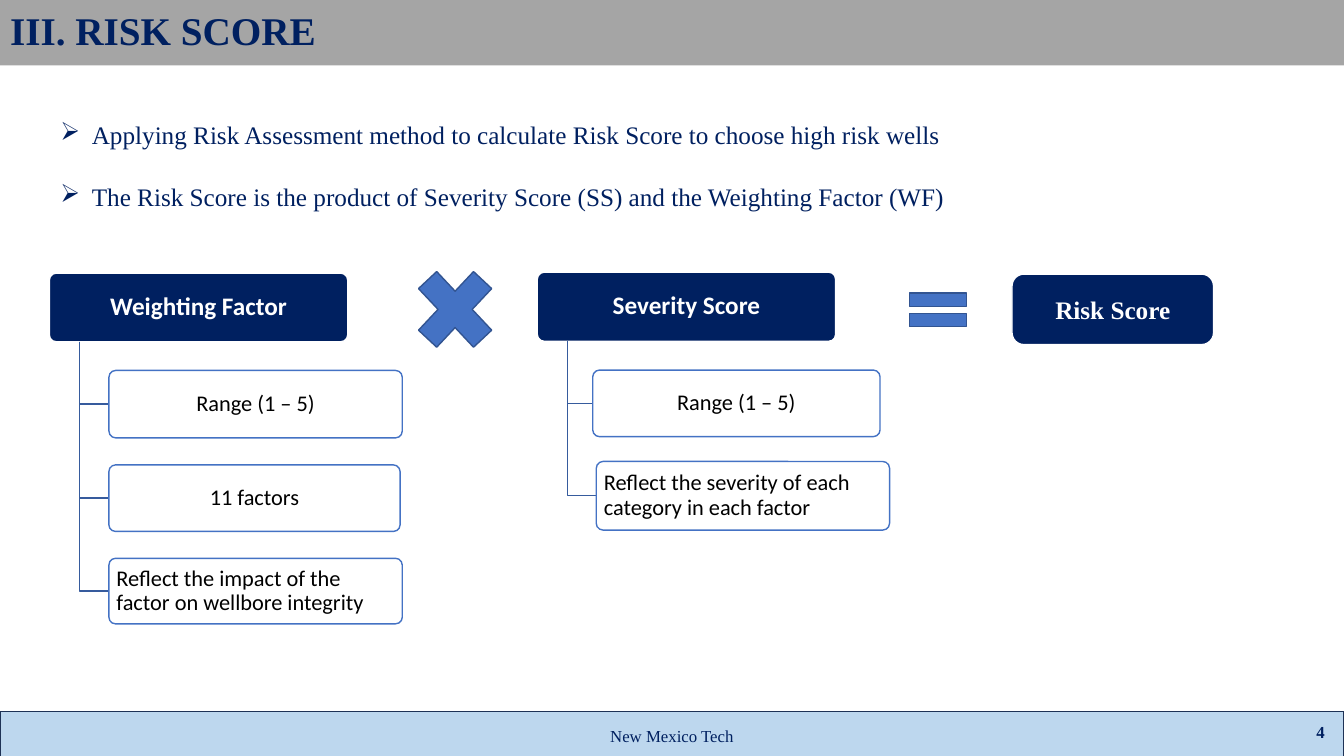
from lxml import etree
from pptx import Presentation
from pptx.dml.color import RGBColor
from pptx.enum.shapes import MSO_SHAPE
from pptx.enum.text import MSO_ANCHOR, PP_ALIGN
from pptx.oxml.ns import qn
from pptx.util import Pt

NAVY = RGBColor(0x00, 0x20, 0x60)
WHITE = RGBColor(0xFF, 0xFF, 0xFF)
BLACK = RGBColor(0x00, 0x00, 0x00)
GRAY = RGBColor(0xA5, 0xA5, 0xA5)
PALE_BLUE = RGBColor(0xBD, 0xD7, 0xEE)
FOOTER_EDGE = RGBColor(0x1E, 0x32, 0x56)
BLUE = RGBColor(0x44, 0x72, 0xC4)
SIGN_EDGE = RGBColor(0x32, 0x54, 0x91)
BRANCH = RGBColor(0x36, 0x5B, 0x9D)

RECTANGLE = MSO_SHAPE.RECTANGLE
ROUNDED = MSO_SHAPE.ROUNDED_RECTANGLE
MULTIPLY = MSO_SHAPE.MATH_MULTIPLY
EQUAL = MSO_SHAPE.MATH_EQUAL
LEFT, CENTER = PP_ALIGN.LEFT, PP_ALIGN.CENTER
RIGHT, JUSTIFY = PP_ALIGN.RIGHT, PP_ALIGN.JUSTIFY
MIDDLE = MSO_ANCHOR.MIDDLE

SERIF, SANS = "Times New Roman", "Calibri"
WIDTH, HEIGHT = 960, 540
TRUNK_INDENT = 21.6


def write(para, text, size=18, font=SERIF, color=NAVY, bold=False,
          align=LEFT, spacing=1.0):
    para.alignment = align
    para.line_spacing = spacing
    span = para.add_run()
    span.text = text
    span.font.size = Pt(size)
    span.font.name = font
    span.font.bold = bold
    span.font.color.rgb = color


def add_text(page, box, text, **text_format):
    label = page.shapes.add_textbox(*map(Pt, box))
    frame = label.text_frame
    frame.word_wrap = True
    frame.vertical_anchor = MIDDLE
    write(frame.paragraphs[0], text, **text_format)


def add_block(page, kind, box, fill, edge):
    block = page.shapes.add_shape(kind, *map(Pt, box))
    block.shadow.inherit = False
    block.fill.solid()
    block.fill.fore_color.rgb = fill
    block.line.color.rgb = edge
    block.line.width = Pt(1)
    return block


def add_card(page, box, fill, edge, text, inset=4, radius=0.1, **text_format):
    card = add_block(page, ROUNDED, box, fill, edge)
    card.adjustments[0] = radius
    frame = card.text_frame
    frame.word_wrap = True
    frame.vertical_anchor = MIDDLE
    frame.margin_left = frame.margin_right = Pt(inset)
    frame.margin_top = frame.margin_bottom = Pt(inset)
    write(frame.paragraphs[0], text, align=text_format.pop("align", CENTER),
          **text_format)


def add_branch(page, trunk_x, top, end_x, end_y):
    """Draw an open elbow down from a header and across to an item."""
    builder = page.shapes.build_freeform(Pt(trunk_x), Pt(top))
    builder.add_line_segments([(Pt(trunk_x), Pt(end_y)), (Pt(end_x), Pt(end_y))],
                              close=False)
    elbow = builder.convert_to_shape()
    elbow.shadow.inherit = False
    elbow.fill.background()
    elbow.line.color.rgb = BRANCH
    elbow.line.width = Pt(1)


def add_hierarchy(page, box, header, items):
    """Draw a header in the box with items given as (text, align, offset box)."""
    left, top, _, height = box
    add_card(page, box, NAVY, WHITE, header, font=SANS, color=WHITE, bold=True,
             spacing=0.9)
    for text, align, (dx, dy, item_width, item_height) in items:
        item_box = (left + dx, top + dy, item_width, item_height)
        add_branch(page, left + TRUNK_INDENT, top + height, item_box[0],
                   item_box[1] + item_height / 2)
        add_card(page, item_box, WHITE, BLUE, text, size=16, font=SANS,
                 color=BLACK, align=align, spacing=0.9)


def add_title(page, box, text):
    title = page.shapes.title
    title.left, title.top, title.width, title.height = map(Pt, box)
    title.fill.solid()
    title.fill.fore_color.rgb = GRAY
    title.text_frame.vertical_anchor = MIDDLE
    write(title.text_frame.paragraphs[0], text, size=28, bold=True, spacing=0.9)


def add_bullets(page, box, texts):
    frame = page.shapes.add_textbox(*map(Pt, box)).text_frame
    frame.word_wrap = True
    for index, text in enumerate(texts):
        para = frame.add_paragraph() if index else frame.paragraphs[0]
        para.level = 1
        properties = para._p.get_or_add_pPr()
        properties.set("marL", str(Pt(58.5)))
        properties.set("indent", str(Pt(-22.5)))
        etree.SubElement(properties, qn("a:buChar")).set("char", "➢")
        para.space_before = Pt(6 if index else 0)
        para.space_after = Pt(6)
        write(para, text, align=JUSTIFY, spacing=1.5)


def add_footer(page, box, text, number):
    left, top, width, height = box
    add_block(page, RECTANGLE, box, PALE_BLUE, FOOTER_EDGE)
    add_text(page, (left + (width - 324) / 2, top + 3, 324, 28.8), text,
             size=12, align=CENTER)
    add_text(page, (left + width - 222.7, top, 216, 28.8), number,
             size=12, bold=True, align=RIGHT)


def add_formula(page, box):
    """Lay out weighting factor times severity score equals risk score."""
    left, top, _, _ = box
    add_hierarchy(page, (left, top + 0.7, 213.1, 49), "Weighting Factor", [
        ("Range (1 – 5)", CENTER, (42.5, 69.5, 209.5, 48.2)),
        ("11 factors", CENTER, (42.5, 137, 208, 47.5)),
        ("Reflect the impact of the factor on wellbore integrity", LEFT,
         (42.5, 203.7, 209.5, 46.8)),
    ])
    add_hierarchy(page, (left + 348.5, top, 213.1, 49.4), "Severity Score", [
        ("Range (1 – 5)", CENTER, (39.6, 70, 205.2, 47.5)),
        ("Reflect the severity of each category in each factor", LEFT,
         (42.1, 135.2, 209.5, 49)),
    ])
    for sign, dx, dy, width, height in ((MULTIPLY, 252, -13.7, 75.6, 80.6),
                                        (EQUAL, 606.9, 6.5, 55.4, 41)):
        add_block(page, sign, (left + dx, top + dy, width, height),
                  BLUE, SIGN_EDGE)
    add_card(page, (left + 687.6, top + 1.4, 144, 50.4), NAVY, WHITE,
             "Risk Score", radius=0.17, color=WHITE, bold=True)


def main():
    deck = Presentation()
    deck.slide_width, deck.slide_height = Pt(WIDTH), Pt(HEIGHT)
    page = deck.slides.add_slide(deck.slide_layouts[5])
    add_footer(page, (0, 508.3, WIDTH, 32.4), "New Mexico Tech", "4")
    add_title(page, (0, 0, WIDTH, 46.8), "III. RISK SCORE")
    add_bullets(page, (0, 70.6, WIDTH, 80.6), (
        "Applying Risk Assessment method to calculate Risk Score to choose high risk wells",
        "The Risk Score is the product of Severity Score (SS) and the Weighting Factor (WF)",
    ))
    add_formula(page, (35.3, 194.4, 831.6, 251.2))
    deck.save("out.pptx")


if __name__ == "__main__":
    main()
